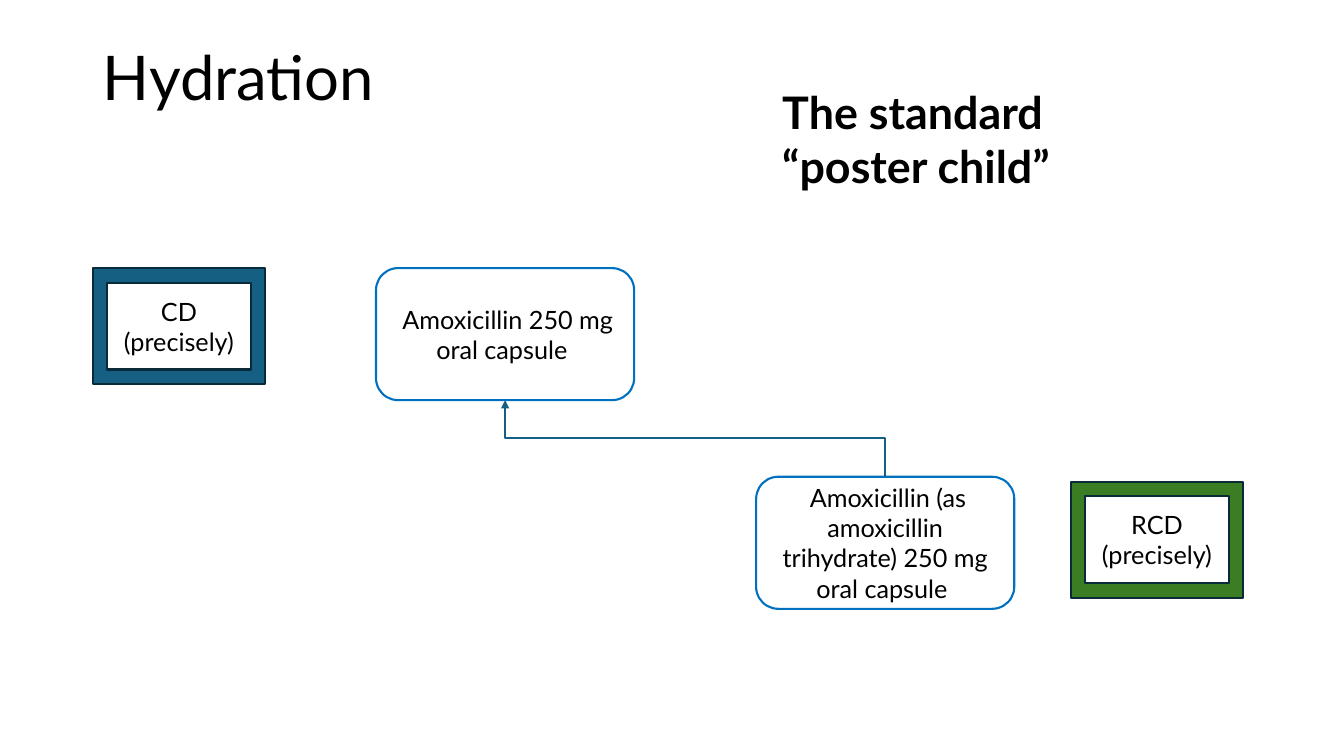
from dataclasses import dataclass

from lxml.etree import SubElement
from pptx import Presentation
from pptx.dml.color import RGBColor
from pptx.enum.shapes import MSO_CONNECTOR as Connector, MSO_SHAPE as Shape
from pptx.enum.text import MSO_ANCHOR as Anchor, MSO_AUTO_SIZE as AutoSize, PP_ALIGN as Align
from pptx.oxml.ns import qn
from pptx.util import Inches, Pt


@dataclass(frozen=True)
class Theme:
    font: str = "Lato"
    text: str = "000000"
    box_fill: str = "FFFFFF"
    box_line: str = "0070C0"
    frame_line: str = "092A39"
    precise: str = "156082"
    real: str = "3B7D23"
    title_size: int = 44
    callout_size: int = 32
    body_size: int = 18
    line_width: float = 1.5


THEME = Theme()
BOX_SIZE = (2.56, 1.31)
FRAME_SIZE = (1.71, 1.15)


def write(shape, text, size, align=Align.LEFT, bold=False):
    frame = shape.text_frame
    frame.word_wrap = True
    paragraph = frame.paragraphs[0]
    paragraph.text = text
    paragraph.alignment = align
    paragraph.font.name = THEME.font
    paragraph.font.size = Pt(size)
    paragraph.font.bold = bold
    paragraph.font.color.rgb = RGBColor.from_string(THEME.text)
    return paragraph


def set_line(line, color):
    line.color.rgb = RGBColor.from_string(color)
    line.width = Pt(THEME.line_width)


def add_title(slide, text):
    title = slide.shapes.title
    title.left, title.top = Inches(0.92), Inches(0.4)
    title.width, title.height = Inches(11.5), Inches(0.8)
    paragraph = write(title, text, THEME.title_size)
    paragraph.line_spacing = 0.9
    title.text_frame.vertical_anchor = Anchor.MIDDLE


def add_callout(slide, text):
    callout = slide.shapes.add_textbox(Inches(7.66), Inches(0.79), Inches(3.32), Inches(1.18))
    write(callout, text, THEME.callout_size, bold=True)
    callout.text_frame.auto_size = AutoSize.SHAPE_TO_FIT_TEXT


def add_node(slide, kind, left, top, size, text, fill, line):
    width, height = size
    shape = slide.shapes.add_shape(kind, Inches(left), Inches(top), Inches(width), Inches(height))
    shape.shadow.inherit = False
    shape.fill.solid()
    shape.fill.fore_color.rgb = RGBColor.from_string(fill)
    set_line(shape.line, line)
    write(shape, text, THEME.body_size, Align.CENTER)
    shape.text_frame.vertical_anchor = Anchor.MIDDLE
    return shape


def add_product(slide, left, top, text):
    return add_node(slide, Shape.ROUNDED_RECTANGLE, left, top, BOX_SIZE, text,
                    THEME.box_fill, THEME.box_line)


def add_label(slide, left, top, text, fill):
    return add_node(slide, Shape.FRAME, left, top, FRAME_SIZE, text, fill, THEME.frame_line)


def add_upward_elbow(slide, child, parent):
    start_x, start_y = child.left + child.width // 2, child.top
    end_x, end_y = parent.left + parent.width // 2, parent.top + parent.height
    run, rise = start_x - end_x, start_y - end_y
    connector = slide.shapes.add_connector(Connector.ELBOW, start_x, start_y, end_x, end_y)
    connector.begin_connect(child, 0)
    connector.end_connect(parent, 2)

    connector.left = (start_x + end_x - rise) // 2
    connector.top = (start_y + end_y - run) // 2
    connector.width, connector.height = rise, run
    properties = connector._element.spPr
    transform = properties.find(qn("a:xfrm"))
    transform.set("rot", str(270 * 60000))
    transform.set("flipH", "0")
    transform.set("flipV", "1")

    set_line(connector.line, THEME.precise)
    SubElement(properties.find(qn("a:ln")), qn("a:tailEnd"), type="triangle")
    SubElement(properties, qn("a:effectLst"))


def main():
    presentation = Presentation()
    presentation.slide_width = Inches(13.33)
    presentation.slide_height = Inches(7.5)
    slide = presentation.slides.add_slide(presentation.slide_layouts[5])

    add_title(slide, "Hydration")
    hydrate = add_product(slide, 7.5, 4.73,
                          " Amoxicillin (as amoxicillin trihydrate) 250 mg oral capsule ")
    base = add_product(slide, 3.73, 2.66, " Amoxicillin 250 mg oral capsule ")
    add_label(slide, 0.92, 2.66, "CD (precisely)", THEME.precise)
    add_label(slide, 10.62, 4.78, "RCD (precisely)", THEME.real)
    add_upward_elbow(slide, hydrate, base)
    add_callout(slide, "The standard “poster child”")

    presentation.save("out.pptx")


if __name__ == "__main__":
    main()
